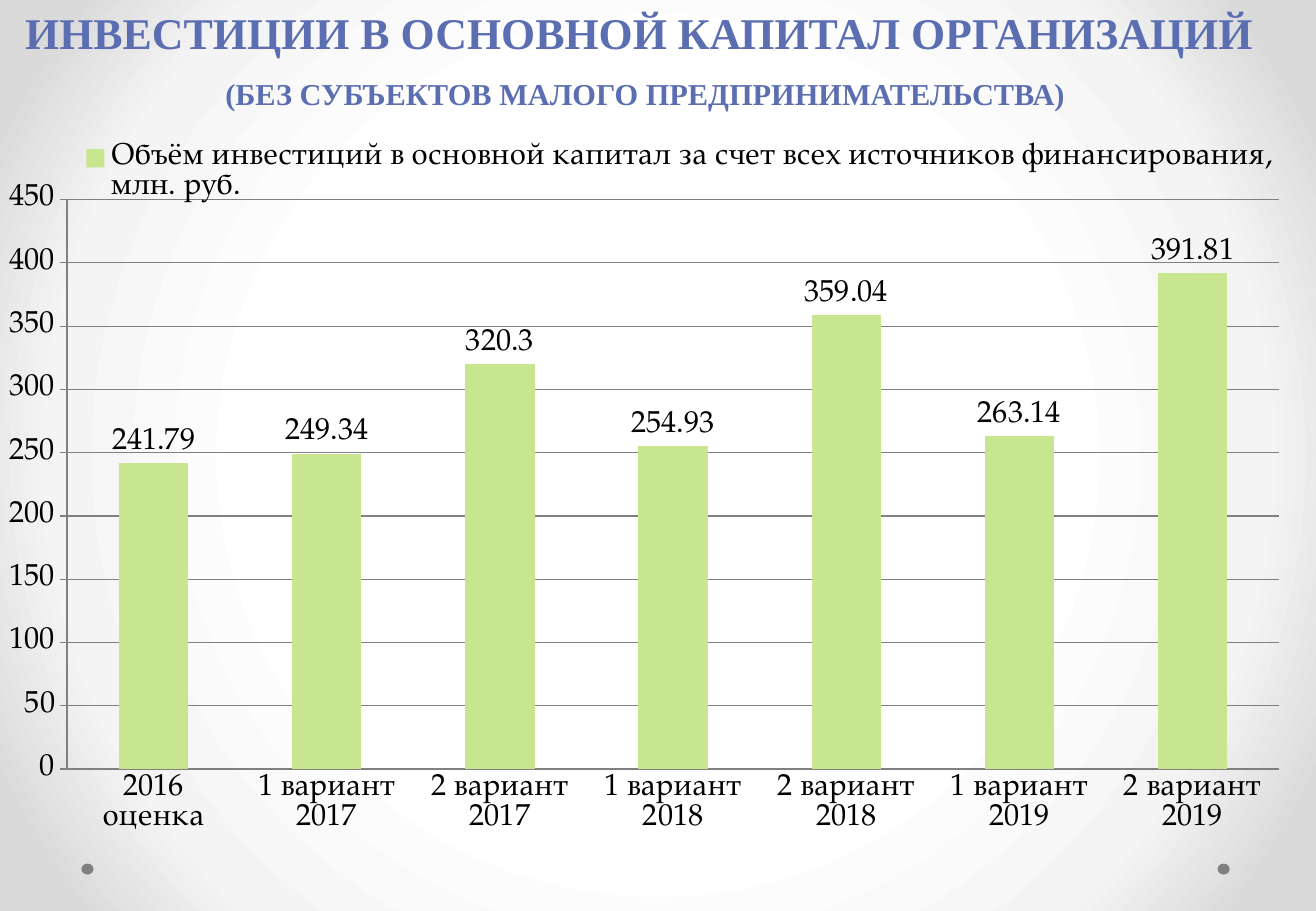
import pptx
import pptx.util
import pptx.chart.data
import pptx.dml.color
import pptx.enum.chart
import pptx.enum.shapes
import pptx.enum.text
import pptx.oxml
import pptx.oxml.ns

Inches, Pt = pptx.util.Inches, pptx.util.Pt
WIDTH, HEIGHT = 10.83, 7.5
CHART_FONT = "TeX Gyre Pagella"
GREY = "808080"


def color(hex_string):
    return pptx.dml.color.RGBColor.from_string(hex_string)


def place(parent, **fractions):
    """Give a chart part a manual layout in shares of the chart's size."""
    old = parent.find(pptx.oxml.ns.qn("c:layout"))
    if old is not None:
        parent.remove(old)
    modes = "".join(f'<c:{axis}Mode val="edge"/>' for axis in "xy")
    sizes = "".join(f'<c:{key} val="{value}"/>' for key, value in fractions.items())
    target = '<c:layoutTarget val="inner"/>' if parent.tag.endswith("plotArea") else ""
    layout = pptx.oxml.parse_xml(
        f'<c:layout {pptx.oxml.ns.nsdecls("c")}><c:manualLayout>'
        f"{target}{modes}{sizes}</c:manualLayout></c:layout>")
    parent.insert(0 if target else 1, layout)


presentation = pptx.Presentation()
presentation.slide_width, presentation.slide_height = Inches(WIDTH), Inches(HEIGHT)
slide = presentation.slides.add_slide(presentation.slide_layouts[5])

# Background: radial gradient, white in the middle
stops = "".join(
    f'<a:gs pos="{share * 1000}"><a:srgbClr val="{tone}"/></a:gs>'
    for share, tone in [(50, "FFFFFF"), (76, "F4F4F4"), (92, "DADADA")])
gradient = pptx.oxml.parse_xml(
    f'<a:gradFill {pptx.oxml.ns.nsdecls("a")} rotWithShape="1"><a:gsLst>{stops}</a:gsLst>'
    '<a:path path="circle"><a:fillToRect l="50000" t="50000" r="50000" b="50000"/></a:path>'
    "</a:gradFill>")
slide.background.fill.solid()
solid = slide.element.find(".//" + pptx.oxml.ns.qn("p:bgPr"))[0]
solid.getparent().replace(solid, gradient)

# Dots in the lower corners
for left in (0.67, 10.02):
    dot = slide.shapes.add_shape(pptx.enum.shapes.MSO_SHAPE.OVAL,
                                 Inches(left), Inches(7.11), Inches(0.1), Inches(0.09))
    dot.shadow.inherit = False
    dot.fill.solid()
    dot.fill.fore_color.rgb = color(GREY)
    dot.line.fill.background()

# Title
title = slide.shapes.title
title.left, title.top, title.width, title.height = 0, 0, Inches(10.62), Inches(1.03)
frame = title.text_frame
frame.text = ("ИНВЕСТИЦИИ В ОСНОВНОЙ КАПИТАЛ ОРГАНИЗАЦИЙ \n"
              "(БЕЗ СУБЪЕКТОВ МАЛОГО ПРЕДПРИНИМАТЕЛЬСТВА)")
frame.word_wrap = True
frame.auto_size = pptx.enum.text.MSO_AUTO_SIZE.NONE
frame.vertical_anchor = pptx.enum.text.MSO_ANCHOR.TOP
for paragraph, size, before in zip(frame.paragraphs, (26, 18), (0, 10)):
    paragraph.alignment = pptx.enum.text.PP_ALIGN.CENTER
    paragraph.space_before = Pt(before)
    font = paragraph.runs[0].font
    font.name, font.size, font.bold = "Times New Roman", Pt(size), True
    font.color.rgb = color("5A6EB1")

# Chart data
chart_data = pptx.chart.data.CategoryChartData()
chart_data.categories = ["2016 оценка"] + [
    f"{variant} вариант {year}" for year in (2017, 2018, 2019) for variant in (1, 2)]
chart_data.add_series(
    "Объём инвестиций в основной капитал за счет всех источников финансирования, млн. руб.",
    [241.79, 249.34, 320.3, 254.93, 359.04, 263.14, 391.81])
chart = slide.shapes.add_chart(
    pptx.enum.chart.XL_CHART_TYPE.COLUMN_CLUSTERED,
    Inches(0.08), Inches(1.15), Inches(10.66), Inches(6.17), chart_data).chart
chart.has_title = False
chart.font.name, chart.font.size = CHART_FONT, Pt(18)
chart.font.color.rgb = color("000000")

# Columns and their labels
plot = chart.plots[0]
plot.gap_width = 150
plot.vary_by_categories = False
series = plot.series[0]
series.format.fill.solid()
series.format.fill.fore_color.rgb = color("C7E68F")
labels = series.data_labels
labels.show_value = True
labels.position = pptx.enum.chart.XL_LABEL_POSITION.OUTSIDE_END

# Axes and gridlines
value_axis, category_axis = chart.value_axis, chart.category_axis
value_axis.minimum_scale, value_axis.maximum_scale, value_axis.major_unit = 0, 450, 50
value_axis.has_major_gridlines = True
value_axis.major_tick_mark = pptx.enum.chart.XL_TICK_MARK.OUTSIDE
category_axis.major_tick_mark = pptx.enum.chart.XL_TICK_MARK.NONE
for part in (value_axis, category_axis, value_axis.major_gridlines):
    part.format.line.color.rgb = color(GREY)
    part.format.line.width = Pt(0.75)

# Legend above the plot
chart.has_legend = True
chart.legend.position = pptx.enum.chart.XL_LEGEND_POSITION.TOP
chart.legend.include_in_layout = False
legend = chart.legend._element
place(legend, x=0.04, y=0, w=0.95, h=0.09)
place(legend.getparent().find(pptx.oxml.ns.qn("c:plotArea")), x=0.04, y=0.08, w=0.94, h=0.76)

presentation.save("out.pptx")
